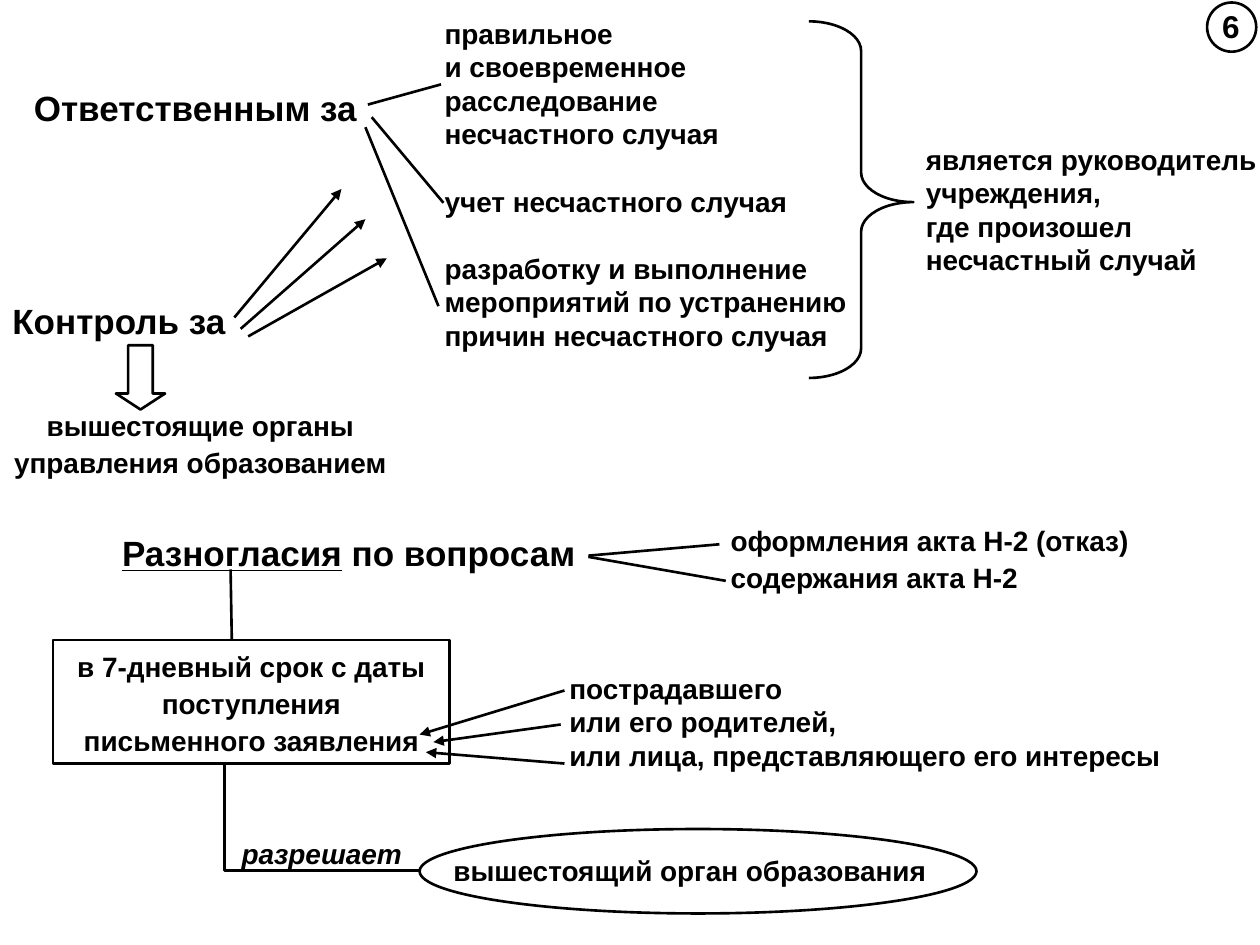
from lxml.etree import SubElement
from pptx import Presentation
from pptx.dml.color import RGBColor
from pptx.enum.shapes import MSO_CONNECTOR, MSO_SHAPE
from pptx.enum.text import MSO_AUTO_SIZE, PP_ALIGN
from pptx.oxml.ns import qn
from pptx.util import Inches, Pt

BLACK = RGBColor(0, 0, 0)
LEFT, MID = PP_ALIGN.LEFT, PP_ALIGN.CENTER
GAP = Pt(19.2)


class Chart:
    """Hold the slide and its style, and draw each kind of element."""

    font = {"name": "Arial", "bold": True, "size": Pt(16)}
    width = Pt(1.5)

    def __init__(self, slide):
        self.slide = slide

    def pen(self, item):
        item.line.color.rgb = BLACK
        item.line.width = self.width

    def text(self, box, lines, align=LEFT, space=None, gaps=(), **extra):
        item = self.slide.shapes.add_textbox(*map(Inches, box))
        frame = item.text_frame
        frame.word_wrap = False
        frame.auto_size = MSO_AUTO_SIZE.SHAPE_TO_FIT_TEXT
        for i, line in enumerate(lines):
            para = frame.paragraphs[0] if i == 0 else frame.add_paragraph()
            para.alignment = align
            if space:
                para.line_spacing = space
            if i in gaps:
                para.space_before = GAP
            for part in line if isinstance(line, tuple) else (line,):
                run = para.add_run()
                run.text = part
                for key, value in {**self.font, **extra}.items():
                    setattr(run.font, key, value)
                run.font.color.rgb = BLACK
        return frame

    def shape(self, kind, box, adjust=(), flip=False):
        item = self.slide.shapes.add_shape(kind, *map(Inches, box))
        item.shadow.inherit = False
        item.fill.background()
        self.pen(item)
        for i, value in enumerate(adjust):
            item.adjustments[i] = value
        if flip:
            item._element.spPr.find(qn("a:xfrm")).set("flipH", "1")

    def line(self, start, end, arrow=False):
        item = self.slide.shapes.add_connector(
            MSO_CONNECTOR.STRAIGHT, *map(Inches, start + end))
        self.pen(item)
        if arrow:
            SubElement(item.line._get_or_add_ln(), qn("a:tailEnd"), type="triangle")
        SubElement(item._element.spPr, qn("a:effectLst"))

    def route(self, *points):
        first, *rest = [tuple(map(Inches, point)) for point in points]
        build = self.slide.shapes.build_freeform(*first)
        build.add_line_segments(rest, close=False)
        item = build.convert_to_shape()
        item.shadow.inherit = False
        item.fill.background()
        self.pen(item)


def main():
    deck = Presentation()
    deck.slide_width, deck.slide_height = Inches(10), Inches(7.5)
    chart = Chart(deck.slides.add_slide(deck.slide_layouts[6]))
    head = {"size": Pt(20)}

    chart.shape(MSO_SHAPE.OVAL, (9.58, 0.02, 0.39, 0.39))
    chart.text((9.6, 0.01, 0.34, 0.4), ["6"], MID, size=Pt(18))

    chart.text((0.17, 0.64, 2.78, 0.43), ["Ответственным за"], **head)
    chart.text((3.43, 0.08, 3.41, 2.77), [
        "правильное", "и своевременное", "расследование", "несчастного случая",
        "учет несчастного случая",
        "разработку и выполнение", "мероприятий по устранению",
        "причин несчастного случая"], gaps=(4, 5))
    chart.shape(MSO_SHAPE.LEFT_BRACE, (6.42, 0.17, 0.83, 2.83), (0.283, 0.507), True)
    chart.text((0, 2.33, 1.9, 0.43), ["Контроль за"], **head)
    chart.text((7.25, 1.08, 2.85, 1.17), [
        "является руководитель", "учреждения,", "где произошел", "несчастный случай"])

    topic = chart.text((0.87, 4.17, 3.81, 0.43), [("Разногласия", " по вопросам")], **head)
    topic.paragraphs[0].runs[0].font.underline = True
    chart.text((5.7, 4.08, 3.38, 0.69), [
        "оформления акта Н-2 (отказ)", "содержания акта Н-2"], space=1.1)
    chart.text((3.5, 6.7, 3.98, 0.39), ["вышестоящий орган образования"], space=1.1)
    chart.shape(MSO_SHAPE.OVAL, (3.33, 6.58, 4.42, 0.67))
    chart.text((0.51, 5.08, 2.97, 0.98), [
        "в 7-дневный срок с даты", "поступления", "письменного заявления"], MID, 1.1)
    chart.shape(MSO_SHAPE.RECTANGLE, (0.42, 5.08, 3.15, 0.98))
    chart.text((0, 3.17, 3.18, 0.69), [
        "вышестоящие органы", "управления образованием"], MID, 1.1)
    chart.text((4.42, 5.28, 4.92, 0.9), [
        "пострадавшего", "или его родителей,",
        "или лица, представляющего его интересы"])
    chart.text((1.82, 6.56, 1.47, 0.39), ["разрешает"], space=1.1, italic=True)
    chart.shape(MSO_SHAPE.DOWN_ARROW, (0.92, 2.74, 0.39, 0.51), (0.5, 0.325))

    for start, end in (
        ((2.92, 0.83), (3.5, 0.67)), ((2.95, 0.93), (3.52, 1.61)),
        ((2.9, 1.01), (3.48, 2.43)), ((4.67, 4.41), (5.71, 4.32)),
        ((4.67, 4.42), (5.76, 4.61)), ((1.83, 4.52), (1.84, 5.08)),
    ):
        chart.line(start, end)
    for start, end in (
        ((1.86, 2.52), (2.71, 1.5)), ((1.91, 2.61), (2.9, 1.74)),
        ((1.97, 2.67), (3.07, 2.05)), ((4.48, 5.48), (3.33, 5.83)),
        ((4.45, 5.75), (3.44, 5.89)), ((4.48, 6.06), (3.38, 5.97)),
    ):
        chart.line(start, end, True)
    chart.route((1.78, 6.07), (1.78, 6.91), (3.34, 6.91))

    deck.save("out.pptx")


if __name__ == "__main__":
    main()
